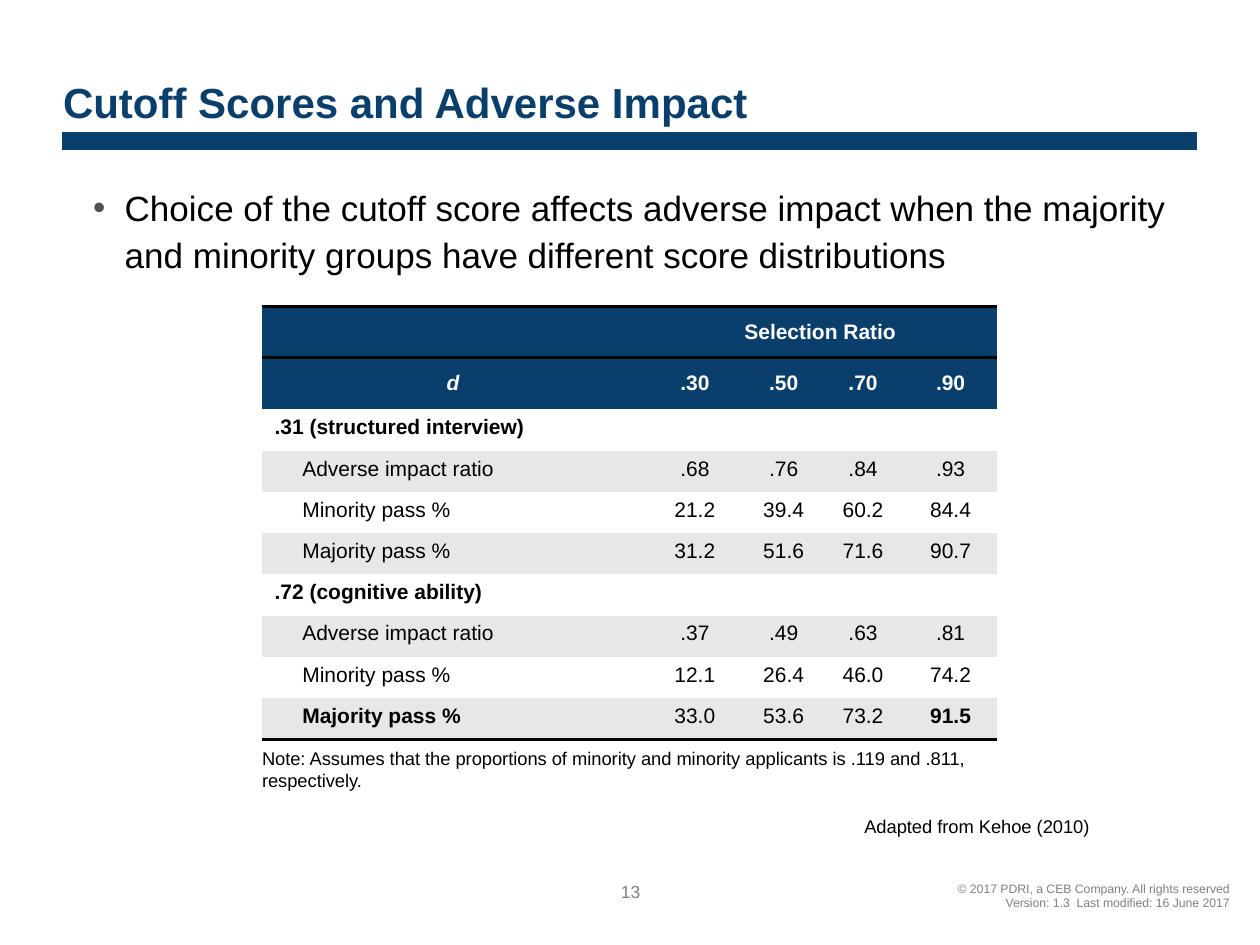
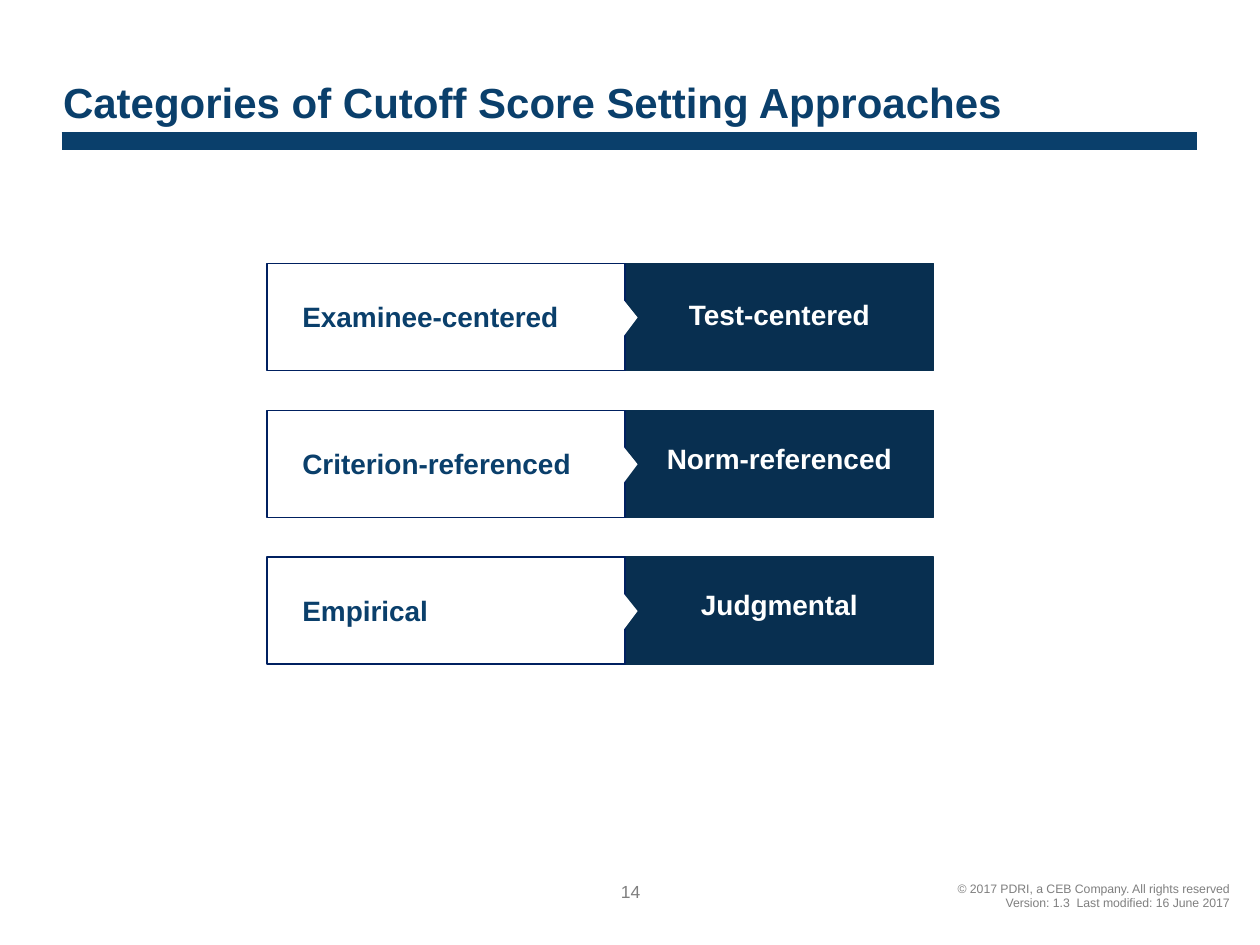
import pptx
import pptx.util
import pptx.dml.color
import pptx.enum.shapes
import pptx.enum.text
import pptx.oxml
import pptx.oxml.ns
from lxml import etree

Inches = pptx.util.Inches
Pt = pptx.util.Pt
Align = pptx.enum.text.PP_ALIGN
Anchor = pptx.enum.text.MSO_ANCHOR
qn = pptx.oxml.ns.qn

COLORS = {
    "brand": "0A3F6B", "dark": "082F50", "outline": "002060", "band": "E7E7E7",
    "white": "FFFFFF", "black": "000000", "grey": "7F7F7F", "bullet": "4D4F53",
}
FONT = "Arial"
FIRST_NUMBER = 13
TITLES = ["Cutoff Scores and Adverse Impact", "Categories of Cutoff Score Setting Approaches"]
FOOTER = [
    "© 2017 PDRI, a CEB Company. All rights reserved",
    "Version: 1.3\u00a0 Last modified: 16 June 2017",
]
BULLET = ("Choice of the cutoff score affects adverse impact when the majority "
          "and minority groups have different score distributions")
NOTE = ("Note: Assumes that the proportions of minority and minority applicants "
        "is .119 and .811, respectively.")
CREDIT = "Adapted from Kehoe (2010)"

RATIO_ROWS = [
    ["", "Selection Ratio", "", "", ""],
    ["d", ".30", ".50", ".70", ".90"],
    [".31 (structured interview)", "", "", "", ""],
    ["Adverse impact ratio", ".68", ".76", ".84", ".93"],
    ["Minority pass %", "21.2", "39.4", "60.2", "84.4"],
    ["Majority pass %", "31.2", "51.6", "71.6", "90.7"],
    [".72 (cognitive ability)", "", "", "", ""],
    ["Adverse impact ratio", ".37", ".49", ".63", ".81"],
    ["Minority pass %", "12.1", "26.4", "46.0", "74.2"],
    ["Majority pass %", "33.0", "53.6", "73.2", "91.5"],
]
COLUMN_WIDTHS = [3.03, 0.81, 0.6, 0.66, 0.73]
HEADER_ROWS, GROUP_ROWS = (0, 1), (2, 6)
HEADER_HEIGHT, TABLE_HEIGHT = 0.41, 3.44
BOLD_CELLS = {(9, 0), (9, 4)}
PLAIN_TABLE_STYLE = "{2D5ABB26-0587-4C30-8999-92F81FD0307C}"

APPROACHES = [
    ("Examinee-centered", "Test-centered", 0.27),
    ("Criterion-referenced", "Norm-referenced", 0.25),
    ("Empirical", "Judgmental", 0.24),
]
PAIR_LEFT, PAIR_TOP, PAIR_PITCH = 2.12, 2.09, 1.165
LEFT_WIDTH, RIGHT_WIDTH, PAIR_HEIGHT = 2.84, 2.45, 0.85


def rgb(name):
    return pptx.dml.color.RGBColor.from_string(COLORS[name])


def apply(target, values):
    for name, value in values.items():
        setattr(target, name, value)


def write(paragraph, text, size, color, bold=False, italic=False, **layout):
    run = paragraph.add_run()
    run.text = text
    apply(run.font, {"name": FONT, "size": Pt(size), "bold": bold, "italic": italic})
    run.font.color.rgb = rgb(color)
    apply(paragraph, layout)


def place(shape, left, top, width, height):
    apply(shape, {"left": Inches(left), "top": Inches(top),
                  "width": Inches(width), "height": Inches(height)})


def add_text(slide, box, lines, size, color, anchor=Anchor.TOP, wrap=True, bold=False, **layout):
    frame = slide.shapes.add_textbox(*map(Inches, box)).text_frame
    apply(frame, {"margin_left": 0, "margin_right": 0, "margin_top": 0, "margin_bottom": 0,
                  "word_wrap": wrap, "vertical_anchor": anchor})
    for index, line in enumerate(lines):
        paragraph = frame.add_paragraph() if index else frame.paragraphs[0]
        write(paragraph, line, size, color, bold, **layout)


def add_base_slide(presentation, layout, title, number):
    slide = presentation.slides.add_slide(presentation.slide_layouts[layout])
    heading = slide.shapes.title
    place(heading, 0.5, 0.4, 9, 0.66)
    apply(heading.text_frame, {
        "margin_left": 0, "margin_right": 0, "vertical_anchor": Anchor.BOTTOM,
        "word_wrap": True, "auto_size": pptx.enum.text.MSO_AUTO_SIZE.NONE})
    write(heading.text_frame.paragraphs[0], title, 24, "brand", True, alignment=Align.LEFT)

    rule = slide.shapes.add_connector(
        pptx.enum.shapes.MSO_CONNECTOR.STRAIGHT,
        Inches(0.49), Inches(1.12), Inches(9.5), Inches(1.12))
    rule.line.color.rgb = rgb("brand")
    rule.line.width = Pt(10.25)
    etree.SubElement(rule._element.spPr, qn("a:effectLst"))

    add_text(slide, (4.26, 6.99, 5.5, 0.23), FOOTER, 7, "grey", Anchor.BOTTOM,
             alignment=Align.RIGHT, line_spacing=Pt(8))
    add_text(slide, (4.81, 7.03, 0.39, 0.15), [str(number)], 10, "grey",
             alignment=Align.CENTER, line_spacing=Pt(9))
    return slide


def add_bullet(slide):
    body = slide.placeholders[1]
    place(body, 0.51, 1.4, 9, 5.04)
    body.text_frame.auto_size = pptx.enum.text.MSO_AUTO_SIZE.NONE
    paragraph = body.text_frame.paragraphs[0]
    properties = paragraph._p.get_or_add_pPr()
    properties.set("marL", str(Inches(0.38)))
    properties.set("indent", str(Inches(-0.25)))
    bullet_color = etree.SubElement(properties, qn("a:buClr"))
    etree.SubElement(bullet_color, qn("a:srgbClr"), val=COLORS["bullet"])
    etree.SubElement(properties, qn("a:buChar"), char="•")
    write(paragraph, BULLET, 20, "black", line_spacing=1.1, space_before=Pt(0))


def set_borders(cell, sides):
    properties = cell._tc.get_or_add_tcPr()
    for index, side in enumerate(sides):
        line = etree.Element(qn(f"a:ln{side}"), w=str(Pt(2)))
        fill = etree.SubElement(line, qn("a:solidFill"))
        etree.SubElement(fill, qn("a:srgbClr"), val=COLORS["black"])
        properties.insert(index, line)


def fill_cell(cell, row, column, text):
    header = row in HEADER_ROWS
    cell.fill.solid()
    shaded = not header and row not in GROUP_ROWS and row % 2
    cell.fill.fore_color.rgb = rgb("brand" if header else "band" if shaded else "white")
    cell.vertical_anchor = Anchor.MIDDLE if header else Anchor.TOP
    if column == 0 and not header and row not in GROUP_ROWS:
        cell.margin_left = Inches(0.32)
    paragraph = cell.text_frame.paragraphs[0]
    if text:
        write(paragraph, text, 12, "white" if header else "black",
              header or row in GROUP_ROWS or (row, column) in BOLD_CELLS, text == "d",
              alignment=Align.CENTER if header or column else Align.LEFT)
    else:
        paragraph._p.get_or_add_endParaRPr().set("sz", "1200")
    if row == 0:
        set_borders(cell, "TB")
    elif row == len(RATIO_ROWS) - 1:
        set_borders(cell, "B")


def add_ratio_table(slide):
    frame = slide.shapes.add_table(
        len(RATIO_ROWS), len(COLUMN_WIDTHS), Inches(2.08), Inches(2.43),
        Inches(sum(COLUMN_WIDTHS)), Inches(TABLE_HEIGHT))
    table = frame.table
    apply(table, {"first_row": False, "horz_banding": False})
    table._tbl.tblPr.find(qn("a:tableStyleId")).text = PLAIN_TABLE_STYLE
    for column, width in zip(table.columns, COLUMN_WIDTHS):
        column.width = Inches(width)
    header_total = HEADER_HEIGHT * len(HEADER_ROWS)
    data_height = (TABLE_HEIGHT - header_total) / (len(RATIO_ROWS) - len(HEADER_ROWS))
    for row, texts in enumerate(RATIO_ROWS):
        table.rows[row].height = Inches(HEADER_HEIGHT if row in HEADER_ROWS else data_height)
        for column, text in enumerate(texts):
            fill_cell(table.cell(row, column), row, column, text)
    table.cell(0, 1).merge(table.cell(0, 4))


def add_box(slide, left, top, width, fill, outline):
    box = slide.shapes.add_shape(
        pptx.enum.shapes.MSO_SHAPE.RECTANGLE,
        Inches(left), Inches(top), Inches(width), Inches(PAIR_HEIGHT))
    box.shadow.inherit = False
    box.fill.solid()
    box.fill.fore_color.rgb = rgb(fill)
    box.line.color.rgb = rgb(outline)
    box.line.width = Pt(0.75)


def add_approach_pair(slide, top, first, second, second_drop):
    seam = PAIR_LEFT + LEFT_WIDTH
    add_box(slide, seam, top, RIGHT_WIDTH, "dark", "dark")
    add_box(slide, PAIR_LEFT, top, LEFT_WIDTH, "white", "outline")
    add_text(slide, (PAIR_LEFT + 0.28, top + 0.29, 2.5, 0.23), [first], 16, "brand",
             wrap=False, bold=True)
    add_text(slide, (seam, top + second_drop, RIGHT_WIDTH, 0.23), [second], 16, "white",
             bold=True, alignment=Align.CENTER)
    corners = [(seam - 0.02, top + 0.28), (seam + 0.1, top + 0.43), (seam - 0.02, top + 0.59)]
    points = [(Inches(x), Inches(y)) for x, y in corners]
    builder = slide.shapes.build_freeform(*points[0])
    builder.add_line_segments(points[1:], close=True)
    notch = builder.convert_to_shape()
    notch.shadow.inherit = False
    notch.fill.solid()
    notch.fill.fore_color.rgb = rgb("white")
    notch.line.fill.background()


def main():
    presentation = pptx.Presentation()
    presentation.slide_width = Inches(10)
    presentation.slide_height = Inches(7.5)

    impact = add_base_slide(presentation, 1, TITLES[0], FIRST_NUMBER)
    add_bullet(impact)
    add_ratio_table(impact)
    add_text(impact, (6.86, 6.47, 2.65, 0.18), [CREDIT], 10.5, "black")
    add_text(impact, (2.08, 5.93, 5.83, 0.35), [NOTE], 10.5, "black")

    categories = add_base_slide(presentation, 5, TITLES[1], FIRST_NUMBER + 1)
    for index, approach in enumerate(APPROACHES):
        add_approach_pair(categories, PAIR_TOP + index * PAIR_PITCH, *approach)

    presentation.save("out.pptx")


if __name__ == "__main__":
    main()
